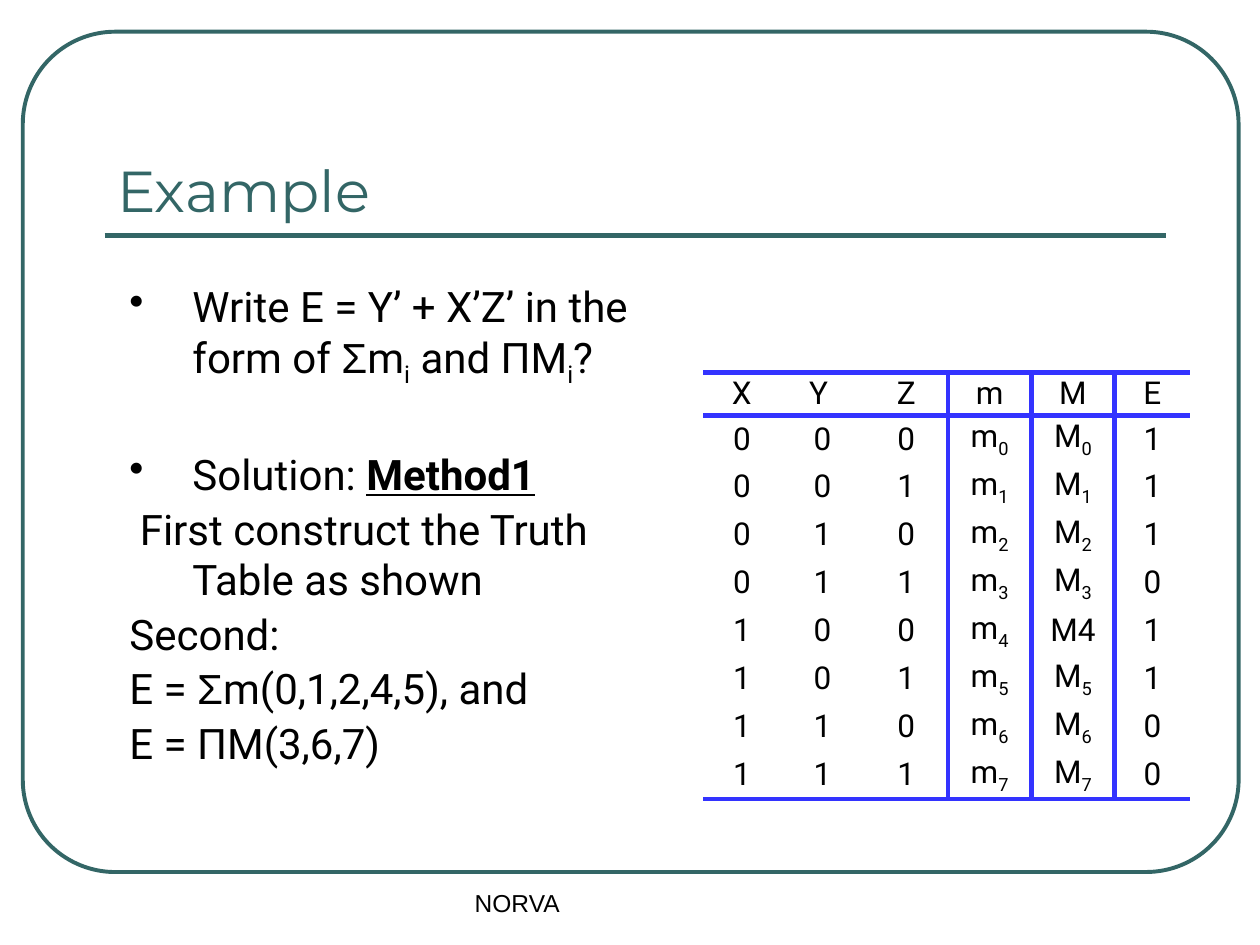
from lxml import etree
from pptx import Presentation
from pptx.dml.color import RGBColor
from pptx.enum.shapes import MSO_CONNECTOR as Conn, MSO_SHAPE as Shape
from pptx.enum.text import MSO_ANCHOR as Anchor, PP_ALIGN as Align
from pptx.oxml.ns import qn
from pptx.util import Cm, Pt

TEAL, BLUE, BLACK = "336666", "3333FF", "000000"
HEAD = ["X", "Y ", "Z", "m", "M", "E"]
OUTPUT = [1, 1, 1, 0, 1, 1, 0, 0]
WIDTHS = [1.55, 1.7, 1.68, 1.68, 1.68, 1.52]
BODY = [
    ("•", ["Write E = Y’ + X’Z’ in the form of ", "Σ", "m", "_i", " and ΠM", "_i", "?"]),
    ("•", ["Solution: ", "*Method1"]),
    ("", [" First construct the Truth Table as shown"]),
    ("", ["Second:"]),
    ("", ["E = ", "Σ", "m(0,1,2,4,5), and"]),
    ("", ["E = ΠM(3,6,7)"]),
]


def paint(hue):
    return RGBColor.from_string(hue)


def style(para, face, size, hue=BLACK):
    para.font.name, para.font.size = face, Pt(size)
    para.font.color.rgb = paint(hue)


def write(para, parts):
    """Add runs; a leading _ lowers a run, a leading * stresses it."""
    for part in parts:
        run = para.add_run()
        run.text = part.lstrip("_*")
        if part[0] == "_":
            run.font._element.set("baseline", "-25000")
        elif part[0] == "*":
            run.font.bold = run.font.underline = True
        elif part == "Σ":
            run.font.name = "Arial"


def add_box(slide, x, y, w, h):
    frame = slide.shapes.add_textbox(Cm(x), Cm(y), Cm(w), Cm(h)).text_frame
    frame.word_wrap = True
    return frame


def add_label(slide, text, spot, face, size, hue=BLACK, anchor=Anchor.TOP):
    frame = add_box(slide, *spot)
    frame.vertical_anchor = anchor
    para = frame.paragraphs[0]
    write(para, [text])
    style(para, face, size, hue)


def add_frame(slide):
    box = slide.shapes.add_shape(
        Shape.ROUNDED_RECTANGLE, Cm(0.46), Cm(0.64), Cm(24.51), Cm(16.94))
    box.adjustments[0] = 0.11
    box.shadow.inherit = False
    box.fill.background()
    box.line.color.rgb = paint(TEAL)
    box.line.width = Pt(2.25)


def add_rule(slide):
    rule = slide.shapes.add_connector(
        Conn.STRAIGHT, Cm(2.11), Cm(4.75), Cm(23.5), Cm(4.75))
    rule.line.color.rgb = paint(TEAL)
    rule.line.width = Pt(3)
    etree.SubElement(rule._element.spPr, qn("a:effectLst"))


def add_body(slide):
    frame = add_box(slide, 2.36, 5.54, 11.61, 10.54)
    for i, (mark, parts) in enumerate(BODY):
        para = frame.add_paragraph() if i else frame.paragraphs[0]
        write(para, parts)
        style(para, "Roboto", 24)
        para.space_before = Pt(33 if i == 1 else 1.2)
        para.space_after = Pt(1.2)
        props = para._p.get_or_add_pPr()
        props.set("marL", str(Cm(1.27)))
        props.set("indent", str(-Cm(1.27)))
        if mark:
            etree.SubElement(props, qn("a:buChar"), char=mark)
        else:
            etree.SubElement(props, qn("a:buNone"))


def set_edges(cell, sides):
    """Draw the sides named in the string and clear the others."""
    props = cell._tc.get_or_add_tcPr()
    for side in "LRTB":
        edge = etree.SubElement(props, qn("a:ln" + side), w=str(Pt(3)))
        if side in sides:
            fill = etree.SubElement(edge, qn("a:solidFill"))
            etree.SubElement(fill, qn("a:srgbClr"), val=BLUE)
        else:
            etree.SubElement(edge, qn("a:noFill"))


def truth_rows():
    yield [[name] for name in HEAD]
    for n, out in enumerate(OUTPUT):
        bits = [[bit] for bit in f"{n:03b}"]
        upper = ["M4"] if n == 4 else ["M", f"_{n}"]
        yield bits + [["m", f"_{n}"], upper, [str(out)]]


def add_truth(slide):
    rows = list(truth_rows())
    last = len(rows) - 1
    table = slide.shapes.add_table(
        len(rows), len(HEAD), Cm(14.18), Cm(7.51), Cm(sum(WIDTHS)), Cm(8.36)).table
    table.first_row = table.horz_banding = False
    for col, width in zip(table.columns, WIDTHS):
        col.width = Cm(width)
    for r, row in enumerate(rows):
        table.rows[r].height = Cm(0.94 if r else 0.84)
        for c, parts in enumerate(row):
            cell = table.cell(r, c)
            sides = "L" * (c > 2) + "R" * (2 <= c < 5)
            sides += "T" * (r < 2) + "B" * (r in (0, last))
            set_edges(cell, sides)
            cell.fill.background()
            cell.vertical_anchor = Anchor.MIDDLE
            cell.margin_top = cell.margin_bottom = Cm(0.05)
            para = cell.text_frame.paragraphs[0]
            para.alignment = Align.CENTER
            write(para, parts)
            style(para, "Roboto", 18)


def main():
    deck = Presentation()
    deck.slide_width, deck.slide_height = Cm(25.4), Cm(19.05)
    slide = deck.slides.add_slide(deck.slide_layouts[6])
    add_frame(slide)
    add_rule(slide)
    add_label(slide, "Example", (2.11, 1.47, 21.36, 3.18),
              "Montserrat", 33, TEAL, Anchor.BOTTOM)
    add_label(slide, "NORVA", (9.32, 17.78, 8.03, 1.27), "Arial", 14)
    add_body(slide)
    add_truth(slide)
    deck.save("out.pptx")


if __name__ == "__main__":
    main()
